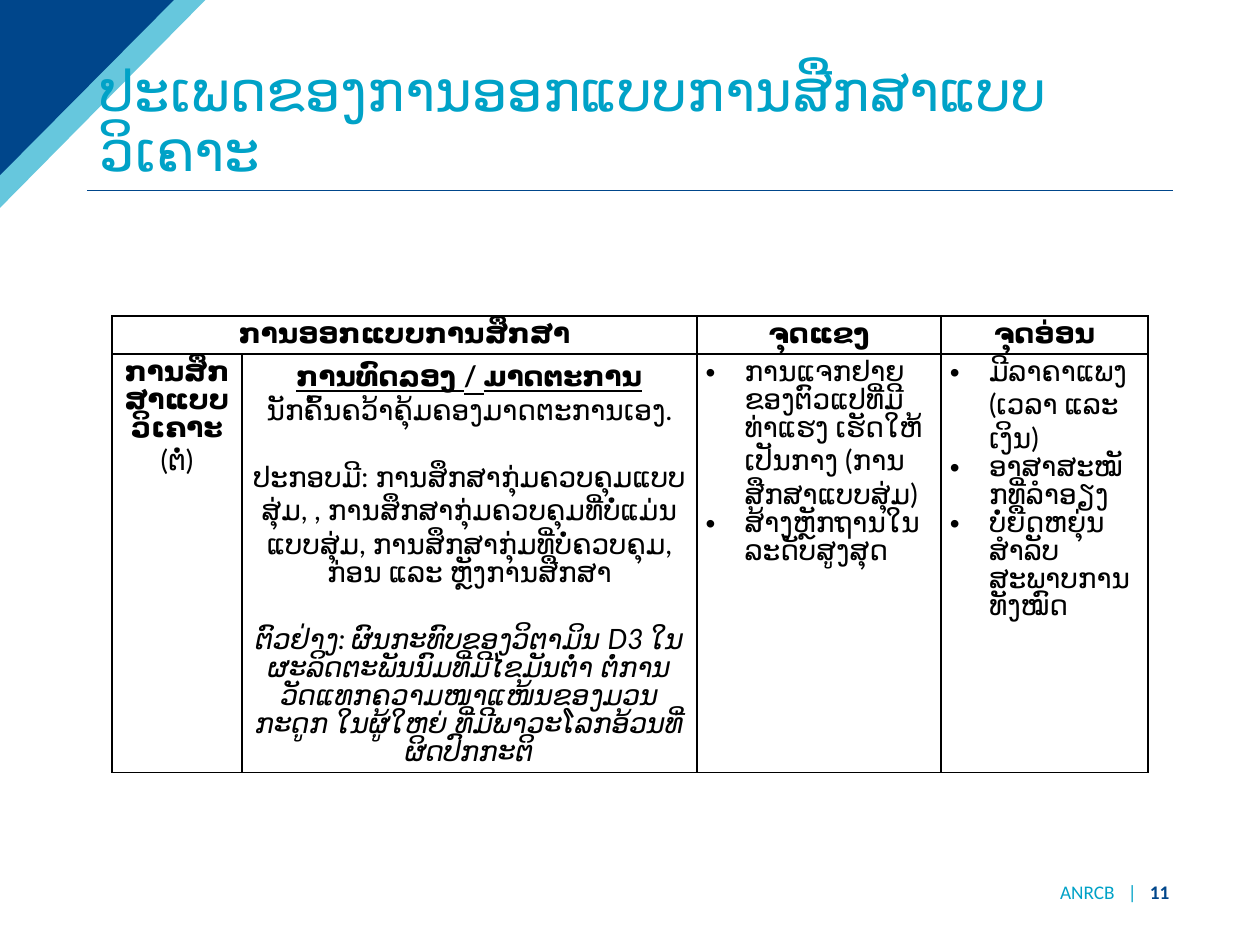
from dataclasses import dataclass

import lxml.etree
import pptx
import pptx.dml.color
import pptx.enum.text
import pptx.oxml
import pptx.oxml.ns
import pptx.util
from pptx.util import Inches

qn = pptx.oxml.ns.qn
ALIGN = pptx.enum.text.PP_ALIGN


@dataclass(frozen=True)
class Theme:
    cyan: str = "00A2C7"
    navy: str = "00468B"
    ink: str = "000000"
    font: str = "Lato"
    footer_font: str = "Calibri"
    title_size: float = 32
    body_size: float = 16
    footer_size: float = 11


THEME = Theme()


@dataclass(frozen=True)
class Para:
    text: str
    bold: bool = False
    italic: bool = False
    underline: bool = False
    bullet: bool = False
    gap: float = 0  # points above


@dataclass(frozen=True)
class Corner:
    width: float
    height: float
    color: str
    opacity: int


CORNERS = [Corner(1.63, 1.65, THEME.cyan, 60), Corner(1.38, 1.39, THEME.navy, 100)]
COLUMNS = [1.03, 3.61, 1.94, 1.64]
ROWS = [0.3, 3.32]
LINE_GAP = 19.2

HEADER = {
    0: [Para("ການອອກແບບການສຶກສາ", bold=True)],
    2: [Para("ຈຸດແຂງ", bold=True)],
    3: [Para("ຈຸດອ່ອນ", bold=True)],
}
BODY = {
    0: [Para("ການສຶກສາແບບວິເຄາະ", bold=True), Para("(ຕໍ່)")],
    1: [
        Para("ການທົດລອງ / ມາດຕະການ", bold=True, underline=True),
        Para("ນັກຄົ້ນຄວ້າຄຸ້ມຄອງມາດຕະການເອງ."),
        Para("ປະກອບມີ: ການສຶກສາກຸ່ມຄວບຄຸມແບບສຸ່ມ, , ການສຶກສາກຸ່ມຄວບຄຸມທີ່ບໍ່ແມ່ນແບບສຸ່ມ, "
             "ການສຶກສາກຸ່ມທີ່ບໍ່ຄວບຄຸມ, ກ່ອນ ແລະ ຫຼັງການສືກສາ", gap=LINE_GAP),
        Para("ຕົວຢ່າງ: ຜົນກະທົບຂອງວິຕາມິນ D3 ໃນຜະລິດຕະພັນນົມທີ່ມີໄຂມັນຕ່ໍາ "
             "ຕໍ່ການວັດແທກຄວາມໜາແໜ້ນຂອງມວນກະດູກ ໃນຜູ້ໃຫຍ່ "
             "ທີ່ມີພາວະໂລກອ້ວນທີ່ຜິດປົກກະຕິ", italic=True, gap=LINE_GAP),
    ],
    2: [
        Para("ການແຈກຢາຍຂອງຕົວແປທີ່ມີທ່າແຮງ ເຮັດໃຫ້ເປັນກາງ (ການສືກສາແບບສຸ່ມ)", bullet=True),
        Para("ສ້າງຫຼັກຖານໃນລະດັບສູງສຸດ", bullet=True),
    ],
    3: [
        Para("ມີລາຄາແພງ (ເວລາ ແລະ ເງິນ)", bullet=True),
        Para("ອາສາສະໝັກທີ່ລຳອຽງ", bullet=True),
        Para("ບໍ່ຍືດຫຍຸ່ນສຳລັບສະພາບການທັງໝົດ", bullet=True),
    ],
}


def rgb(color: str) -> pptx.dml.color.RGBColor:
    return pptx.dml.color.RGBColor.from_string(color)


def style_run(r, size: float, color: str, font: str = THEME.font, bold: bool = False) -> None:
    r.font.size = pptx.util.Pt(size)
    r.font.name = font
    r.font.bold = bold
    r.font.color.rgb = rgb(color)


def draw_corner(slide, corner: Corner) -> None:
    builder = slide.shapes.build_freeform(0, 0)
    builder.add_line_segments([(Inches(corner.width), 0), (0, Inches(corner.height))], close=True)
    sp = builder.convert_to_shape()
    sp.shadow.inherit = False
    sp.line.fill.background()
    sp.fill.solid()
    sp.fill.fore_color.rgb = rgb(corner.color)
    if corner.opacity < 100:
        clr = sp.fill._xPr.find(".//" + qn("a:srgbClr"))
        lxml.etree.SubElement(clr, qn("a:alpha")).set("val", str(corner.opacity * 1000))


def draw_rule(slide) -> None:
    line = slide.shapes.add_connector(1, Inches(0.69), Inches(1.51), Inches(9.31), Inches(1.51))
    line.line.color.rgb = rgb(THEME.navy)
    line.line.width = pptx.util.Pt(0.75)
    lxml.etree.SubElement(line._element.spPr, qn("a:effectLst"))


def draw_title(slide, text: str) -> None:
    """Fill the title placeholder and bring it in front of the corner."""
    title = slide.shapes.title
    title.left, title.top = Inches(0.69), Inches(0.4)
    title.width, title.height = Inches(8.62), Inches(1.11)
    tf = title.text_frame
    tf.text = text
    tf.auto_size = pptx.enum.text.MSO_AUTO_SIZE.NONE
    tf.vertical_anchor = pptx.enum.text.MSO_ANCHOR.BOTTOM
    p = tf.paragraphs[0]
    p.alignment = ALIGN.LEFT
    p.line_spacing = 0.9
    style_run(p.runs[0], THEME.title_size, THEME.cyan)
    slide.shapes._spTree.append(title._element)


def add_bullet(p) -> None:
    pPr = p._p.get_or_add_pPr()
    pPr.set("marL", str(Inches(0.31)))
    pPr.set("indent", str(Inches(-0.31)))
    lxml.etree.SubElement(pPr, qn("a:buFont")).set("typeface", "Arial")
    lxml.etree.SubElement(pPr, qn("a:buChar")).set("char", "•")


def fill_cell(cell, paras: list[Para]) -> None:
    tf = cell.text_frame
    tf.text = "\n".join(para.text for para in paras)
    for p, para in zip(tf.paragraphs, paras):
        p.alignment = ALIGN.LEFT if para.bullet else ALIGN.CENTER
        if para.gap:
            p.space_before = pptx.util.Pt(para.gap)
        if para.bullet:
            add_bullet(p)
        r = p.runs[0]
        style_run(r, THEME.body_size, THEME.ink, bold=para.bold)
        r.font.italic = para.italic
        r.font.underline = para.underline


def format_cell(cell) -> None:
    """Set margins, four thin borders and no fill."""
    cell.margin_left = cell.margin_right = Inches(0.07)
    cell.margin_top = cell.margin_bottom = Inches(0.04)
    tcPr = cell._tc.get_or_add_tcPr()
    for side in ("lnL", "lnR", "lnT", "lnB"):
        ln = lxml.etree.SubElement(tcPr, qn(f"a:{side}"), w=str(pptx.util.Pt(1)))
        fill = lxml.etree.SubElement(ln, qn("a:solidFill"))
        lxml.etree.SubElement(fill, qn("a:srgbClr")).set("val", THEME.ink)
    cell.fill.background()


def draw_table(slide) -> None:
    table = slide.shapes.add_table(
        len(ROWS), len(COLUMNS), Inches(0.89), Inches(2.51),
        Inches(sum(COLUMNS)), Inches(sum(ROWS))).table
    table.first_row = table.horz_banding = False
    for column, width in zip(table.columns, COLUMNS):
        column.width = Inches(width)
    for row, height in zip(table.rows, ROWS):
        row.height = Inches(height)
    table.cell(0, 0).merge(table.cell(0, 1))
    for cell in (c for row in table.rows for c in row.cells):
        format_cell(cell)
    for i, texts in enumerate((HEADER, BODY)):
        for j, paras in texts.items():
            fill_cell(table.cell(i, j), paras)


def draw_footer(slide) -> None:
    tf = slide.shapes.add_textbox(Inches(7.73), Inches(6.94), Inches(1.65), Inches(0.21)).text_frame
    tf.word_wrap = True
    p = tf.paragraphs[0]
    p.alignment = ALIGN.RIGHT
    for text, color, bold in (("ANRCB   |   ", THEME.cyan, False), ("11", THEME.navy, True)):
        r = p.add_run()
        r.text = text
        style_run(r, THEME.footer_size, color, THEME.footer_font, bold)


def main() -> None:
    prs = pptx.Presentation()
    prs.slide_width, prs.slide_height = Inches(10), Inches(7.5)
    slide = prs.slides.add_slide(prs.slide_layouts.get_by_name("Title Only"))
    draw_rule(slide)
    for corner in CORNERS:
        draw_corner(slide, corner)
    draw_title(slide, "ປະເພດຂອງການອອກແບບການສືກສາແບບວິເຄາະ")
    draw_table(slide)
    draw_footer(slide)
    prs.save("out.pptx")


if __name__ == "__main__":
    main()
